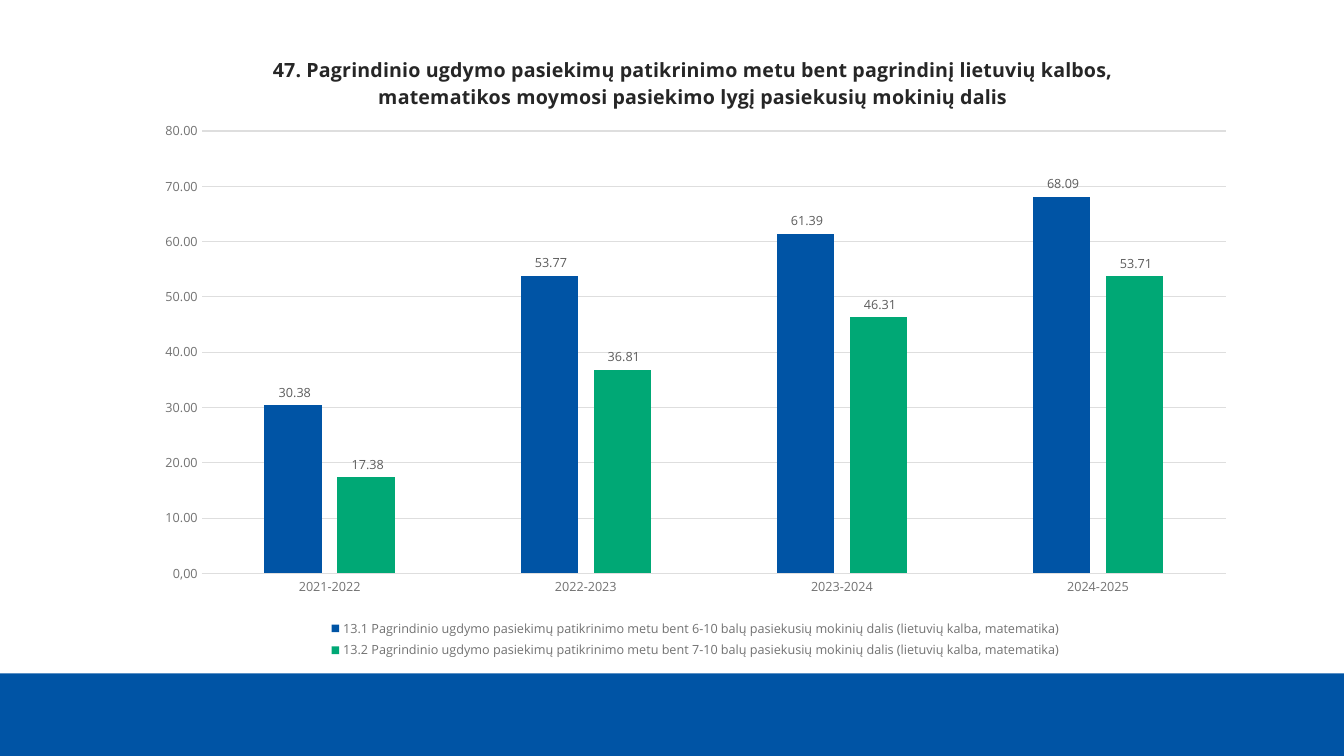
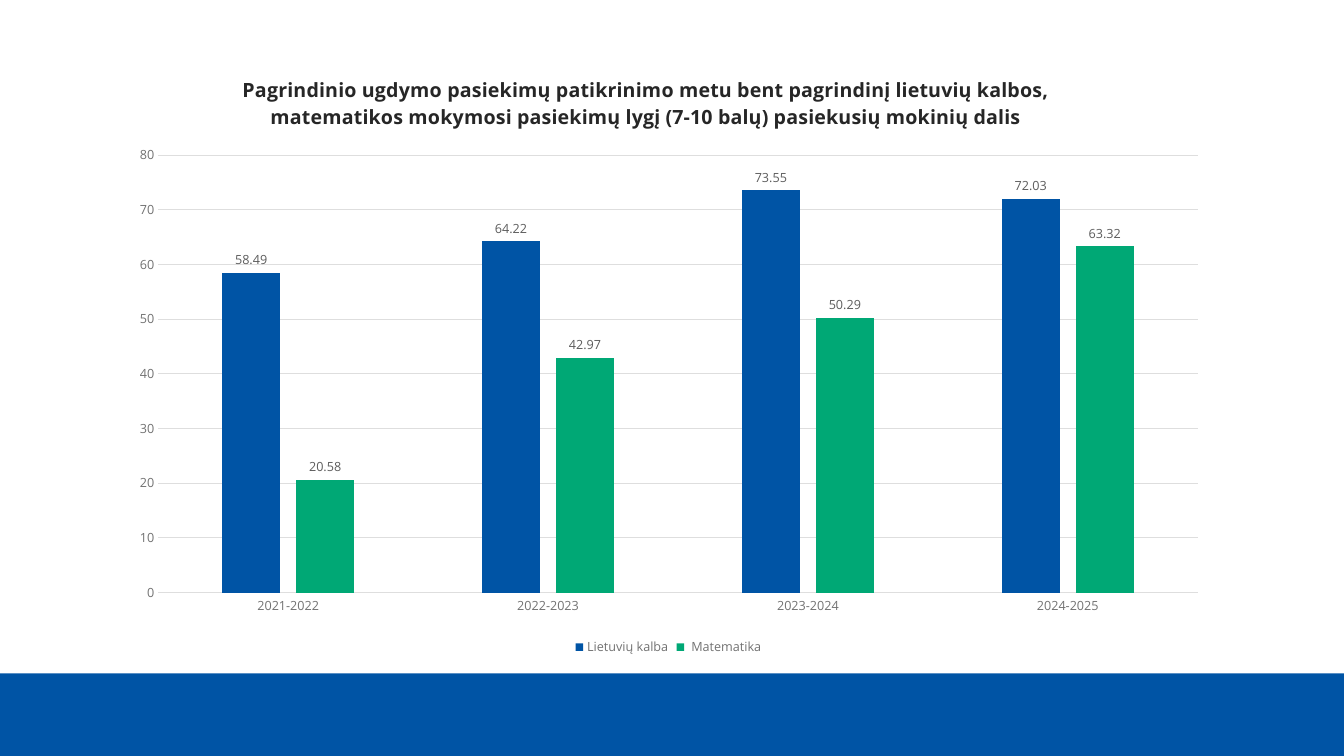
from lxml import etree
from pptx import Presentation
from pptx.chart.data import CategoryChartData
from pptx.dml.color import RGBColor
from pptx.enum.chart import XL_CHART_TYPE, XL_LABEL_POSITION, XL_LEGEND_POSITION, XL_TICK_MARK
from pptx.enum.shapes import MSO_SHAPE
from pptx.enum.text import PP_ALIGN
from pptx.oxml.ns import qn
from pptx.util import Inches, Pt

COLUMN = XL_CHART_TYPE.COLUMN_CLUSTERED
OUTSIDE = XL_LABEL_POSITION.OUTSIDE_END
BOTTOM = XL_LEGEND_POSITION.BOTTOM
NO_TICK = XL_TICK_MARK.NONE
RECT = MSO_SHAPE.RECTANGLE
CENTER = PP_ALIGN.CENTER

FONT = "Open Sans"
COLORS = {
    "blue": "0054A5",
    "green": "00A875",
    "title": "262626",
    "axis": "727272",
    "label": "5C5C5C",
    "grid": "DEDEDE",
}
YEARS = ["2021-2022", "2022-2023", "2023-2024", "2024-2025"]

SLIDES = [
    {
        "title": "47. Pagrindinio ugdymo pasiekimų patikrinimo metu bent pagrindinį lietuvių kalbos, "
                 "matematikos moymosi pasiekimo lygį pasiekusių mokinių dalis",
        "box": (1.4, 0.25, 10.99, 6.33),
        "head": (1.27, 0.25),
        "plot": (0.6, 1.05, 10.16, 4.39),
        "format": r"#\ ##0.00;\-#\ ##0.00;\0\,\0\0",
        "series": [
            ("13.1 Pagrindinio ugdymo pasiekimų patikrinimo metu bent 6-10 balų "
             "pasiekusių mokinių dalis (lietuvių kalba, matematika)",
             (30.38, 53.77, 61.39, 68.09)),
            ("13.2 Pagrindinio ugdymo pasiekimų patikrinimo metu bent 7-10 balų "
             "pasiekusių mokinių dalis (lietuvių kalba, matematika)",
             (17.38, 36.81, 46.31, 53.71)),
        ],
    },
    {
        "title": "Pagrindinio ugdymo pasiekimų patikrinimo metu bent pagrindinį lietuvių kalbos, "
                 "matematikos mokymosi pasiekimų lygį (7-10 balų) pasiekusių mokinių dalis",
        "box": (1.17, 0.52, 10.92, 6.03),
        "head": (1.2, 0.18),
        "plot": (0.4, 1.02, 10.31, 4.34),
        "format": "General",
        "series": [
            ("Lietuvių kalba", (58.49, 64.22, 73.55, 72.03)),
            (" Matematika", (20.58, 42.97, 50.29, 63.32)),
        ],
    },
]


def color(name):
    return RGBColor.from_string(COLORS[name])


def style(font, size, name, bold=False):
    font.name = FONT
    font.size = Pt(size)
    font.bold = bold
    font.color.rgb = color(name)


def rule(line):
    line.color.rgb = color("grid")
    line.width = Pt(0.75)


def add_band(slide, layout):
    band = slide.shapes.add_shape(RECT, 0, Inches(6.68), Inches(13.33), Inches(0.82))
    band.shadow.inherit = False
    band.fill.solid()
    band.fill.fore_color.rgb = color("blue")
    band.line.fill.background()
    band.element.nvSpPr.cNvPr.set("id", "20")
    layout.shapes.element.append(band.element)


def set_layout(parent, after, box, part, inner=False):
    for old in parent.findall(qn("c:layout")):
        parent.remove(old)
    layout = etree.Element(qn("c:layout"))
    manual = etree.SubElement(layout, qn("c:manualLayout"))
    sizes = (box[2], box[3], box[2], box[3])
    items = [("layoutTarget", "inner")] if inner else []
    items += [("xMode", "edge"), ("yMode", "edge")]
    items += [(key, f"{value / size:.4f}") for key, value, size in zip("xywh", part, sizes)]
    for key, value in items:
        etree.SubElement(manual, qn("c:" + key)).set("val", value)
    if after is None:
        parent.insert(0, layout)
    else:
        after.addnext(layout)


def set_title(chart, page):
    frame = chart.chart_title.text_frame
    frame.text = page["title"]
    para = frame.paragraphs[0]
    para.alignment = CENTER
    style(para.font, 14, "title", True)
    chart.chart_title.include_in_layout = False
    node = chart.element.find(".//" + qn("c:title"))
    set_layout(node, node.find(qn("c:tx")), page["box"], page["head"])


def set_axes(chart, form):
    years, values = chart.category_axis, chart.value_axis
    for axis in (years, values):
        axis.major_tick_mark = NO_TICK
        axis.minor_tick_mark = NO_TICK
        style(axis.tick_labels.font, 9, "axis")
    rule(years.format.line)
    values.format.line.fill.background()
    values.minimum_scale = 0
    values.maximum_scale = 80
    values.major_unit = 10
    values.has_major_gridlines = True
    rule(values.major_gridlines.format.line)
    values.tick_labels.number_format = form
    values.tick_labels.number_format_is_linked = False


def set_bars(plot, form):
    plot.gap_width = 219
    plot.overlap = -27
    plot.vary_by_categories = False
    for series, name in zip(plot.series, ("blue", "green")):
        series.invert_if_negative = False
        series.format.fill.solid()
        series.format.fill.fore_color.rgb = color(name)
        labels = series.data_labels
        labels.show_value = True
        labels.position = OUTSIDE
        labels.number_format = form
        labels.number_format_is_linked = False
        style(labels.font, 9, "label")


def add_chart(slide, page):
    data = CategoryChartData()
    data.categories = YEARS
    for name, values in page["series"]:
        data.add_series(name, values)
    box = [Inches(length) for length in page["box"]]
    chart = slide.shapes.add_chart(COLUMN, *box, data).chart
    style(chart.font, 10, "title")
    set_title(chart, page)
    set_axes(chart, page["format"])
    set_bars(chart.plots[0], page["format"])
    chart.has_legend = True
    chart.legend.position = BOTTOM
    chart.legend.include_in_layout = False
    style(chart.legend.font, 9, "axis")
    area = chart.element.find(".//" + qn("c:plotArea"))
    set_layout(area, None, page["box"], page["plot"], True)


def main():
    deck = Presentation()
    deck.slide_width = Inches(13.33)
    deck.slide_height = Inches(7.5)
    layout = deck.slide_layouts[6]
    for index, page in enumerate(SLIDES):
        slide = deck.slides.add_slide(layout)
        if index == 0:
            add_band(slide, layout)
        add_chart(slide, page)
    deck.save("out.pptx")


if __name__ == "__main__":
    main()
